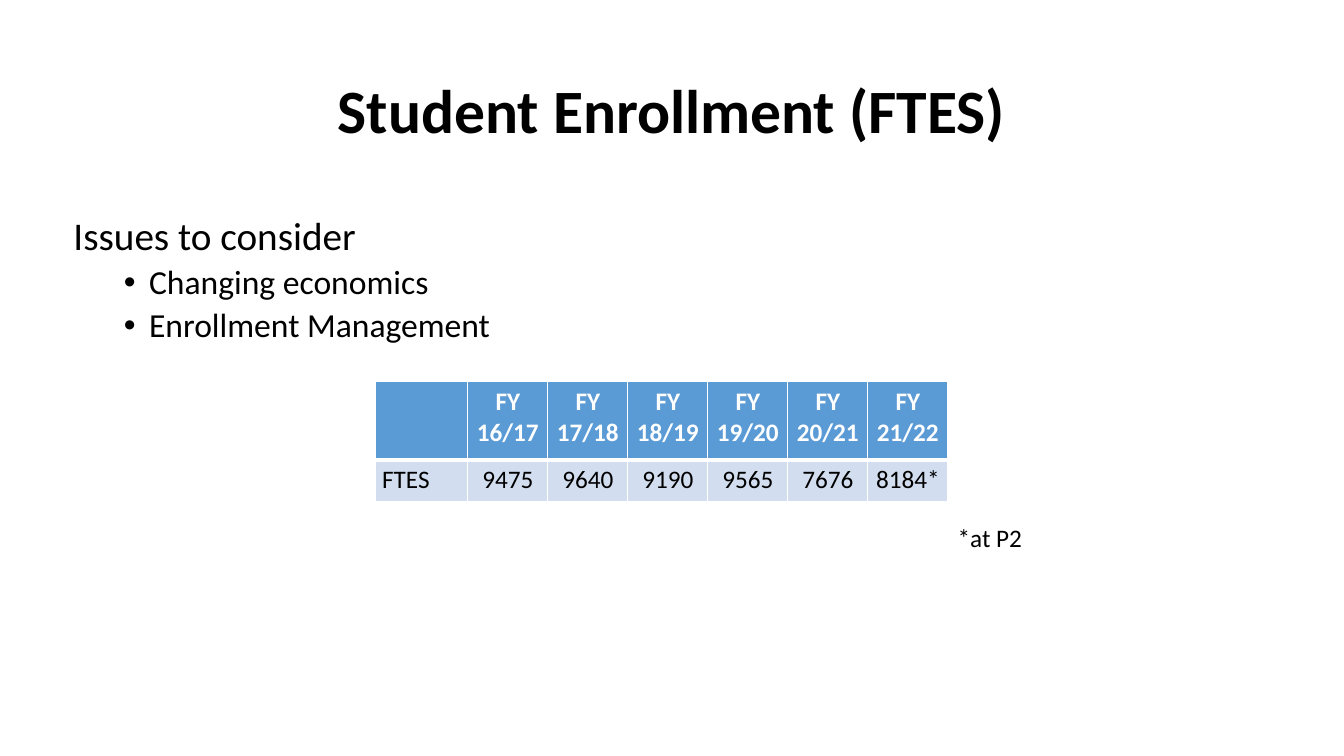
from lxml import etree
from pptx import Presentation
from pptx.dml.color import RGBColor
from pptx.enum.text import MSO_ANCHOR, PP_ALIGN
from pptx.oxml.ns import qn
from pptx.util import Pt

BLACK = RGBColor(0x00, 0x00, 0x00)
WHITE = RGBColor(0xFF, 0xFF, 0xFF)
HEADER_BLUE = RGBColor(0x5B, 0x9B, 0xD5)
ROW_BLUE = RGBColor(0xD2, 0xDE, 0xEF)
FONT = "Calibri"
LEFT, CENTER = PP_ALIGN.LEFT, PP_ALIGN.CENTER
TOP, MIDDLE = MSO_ANCHOR.TOP, MSO_ANCHOR.MIDDLE

HEADINGS = ["", "FY 16/17", "FY 17/18", "FY 18/19",
            "FY\n19/20", "FY\n20/21", "FY\n21/22"]
ENROLLMENT = ["FTES", "9475", "9640", "9190", "9565", "7676", "8184*"]


def write_para(para, text, size=18, color=BLACK, bold=False, align=LEFT,
               spacing=1.0, before=0, bullet=False):
    para.alignment = align
    para.line_spacing = spacing
    para.space_before = Pt(before)
    span = para.add_run()
    span.text = text
    span.font.name = FONT
    span.font.size = Pt(size)
    span.font.bold = bold
    span.font.color.rgb = color
    if bullet:
        props = para._p.get_or_add_pPr()
        props.set("marL", str(Pt(54)))
        props.set("indent", str(Pt(-18)))
        etree.SubElement(props, qn("a:buFont")).set("typeface", "Arial")
        etree.SubElement(props, qn("a:buChar")).set("char", "•")


def add_text_box(page, left, top, width, height, anchor=TOP, margin_top=3.6):
    box = page.shapes.add_textbox(Pt(left), Pt(top), Pt(width), Pt(height))
    frame = box.text_frame
    frame.word_wrap = True
    frame.vertical_anchor = anchor
    frame.margin_top = Pt(margin_top)
    return frame


def set_borders(cell, top=1, bottom=1):
    props = cell._tc.get_or_add_tcPr()
    widths = {"a:lnL": 1, "a:lnR": 1, "a:lnT": top, "a:lnB": bottom}
    for position, (tag, width) in enumerate(widths.items()):
        line = etree.Element(qn(tag), w=str(Pt(width)))
        fill = etree.SubElement(line, qn("a:solidFill"))
        etree.SubElement(fill, qn("a:srgbClr")).set("val", str(WHITE))
        props.insert(position, line)


def fill_cell(cell, text, fill, **text_format):
    cell.fill.solid()
    cell.fill.fore_color.rgb = fill
    cell.margin_left = cell.margin_right = Pt(4.5)
    cell.margin_top = cell.margin_bottom = Pt(3.6)
    frame = cell.text_frame
    for index, line in enumerate(text.split("\n")):
        para = frame.add_paragraph() if index else frame.paragraphs[0]
        write_para(para, line, **text_format)


def add_enrollment_table(page):
    frame = page.shapes.add_table(2, len(HEADINGS), Pt(268.5), Pt(272.5),
                                  Pt(408.6), Pt(85.5))
    table = frame.table
    for index, column in enumerate(table.columns):
        column.width = Pt(57.15 if index else 65.7)
    table.rows[0].height = Pt(56)
    table.rows[1].height = Pt(29.5)
    for index, (heading, value) in enumerate(zip(HEADINGS, ENROLLMENT)):
        header, body = table.cell(0, index), table.cell(1, index)
        fill_cell(header, heading, HEADER_BLUE, color=WHITE, bold=True,
                  align=CENTER)
        fill_cell(body, value, ROW_BLUE, align=CENTER if index else LEFT)
        set_borders(header, bottom=3)
        set_borders(body, top=3)


def main():
    deck = Presentation()
    deck.slide_width, deck.slide_height = Pt(960), Pt(540)
    page = deck.slides.add_slide(deck.slide_layouts[6])

    # Title
    title = add_text_box(page, 66, 28.75, 828, 104.4, anchor=MIDDLE)
    write_para(title.paragraphs[0], "Student Enrollment (FTES)", size=44,
               bold=True, align=CENTER, spacing=0.9)

    # Enrollment by fiscal year, with its footnote
    add_enrollment_table(page)
    note = add_text_box(page, 677, 369.5, 136, 29)
    write_para(note.paragraphs[0], "*at P2")

    # Issues
    issues = add_text_box(page, 45.4, 109.4, 391.7, 162.7, margin_top=45)
    write_para(issues.paragraphs[0], "Issues to consider", size=28,
               spacing=0.9)
    for issue in ("Changing economics", "Enrollment Management"):
        write_para(issues.add_paragraph(), issue, size=24, spacing=0.9,
                   before=5, bullet=True)

    deck.save("out.pptx")


if __name__ == "__main__":
    main()
